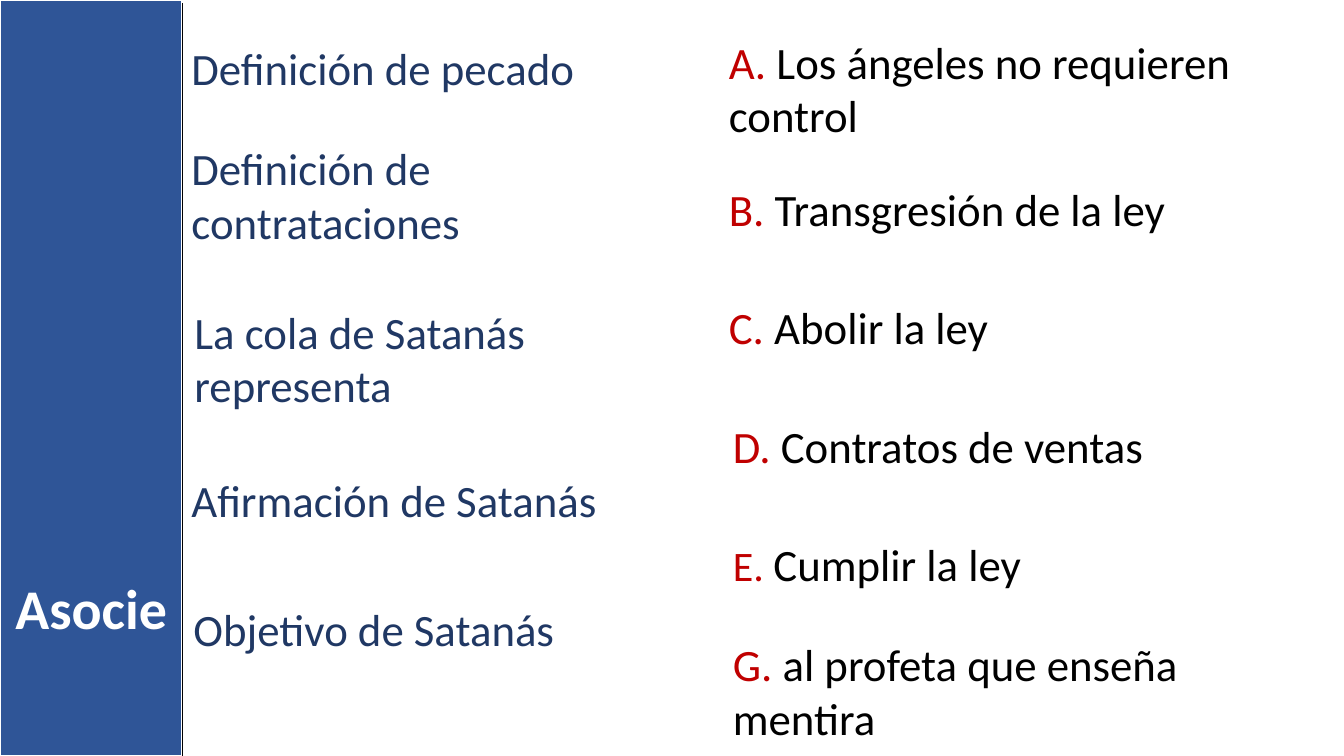
"""Build a matching exercise with concepts on the left and lettered answers on the right."""
from dataclasses import dataclass

from lxml import etree
from pptx import Presentation
from pptx import util as u
from pptx.dml.color import RGBColor
from pptx.enum import shapes, text
from pptx.oxml.ns import qn

PX = 9144
SLIDE_WIDTH, SLIDE_HEIGHT = 1333, 750
SIDEBAR_WIDTH = 181
LINE_HEIGHTS = {1: 64, 2: 118}
FONT = "Calibri"
WHITE = RGBColor(0xFF, 0xFF, 0xFF)
BLACK = RGBColor(0, 0, 0)
BLUE = RGBColor(0x2F, 0x55, 0x97)
NAVY = RGBColor(0x20, 0x38, 0x64)
RED = RGBColor(0xC0, 0, 0)


@dataclass(frozen=True)
class Entry:
    left: int
    top: int
    width: int
    wording: str
    lines: int = 1
    letter: str = ""
    letter_size: int = 32


CONCEPTS = (
    Entry(180, 35, 525, "Definición de pecado"),
    Entry(180, 135, 525, "Definición de contrataciones", 2),
    Entry(183, 297, 492, "La cola de Satanás representa", 2),
    Entry(180, 464, 460, "Afirmación de Satanás"),
    Entry(182, 592, 441, "Objetivo de Satanás"),
)
ANSWERS = (
    Entry(713, 29, 605, "Los ángeles no requieren control", 2, "A"),
    Entry(713, 175, 592, "Transgresión de la ley", 1, "B"),
    Entry(713, 292, 388, "Abolir la ley", 1, "C"),
    Entry(717, 411, 580, "Contratos de ventas", 1, "D"),
    Entry(717, 528, 553, "Cumplir la ley", 1, "E", 30),
    Entry(717, 627, 559, "al profeta que enseña mentira", 2, "G"),
)


def px(*lengths: int) -> list[u.Emu]:
    return [u.Emu(length * PX) for length in lengths]


def add_entry(slide, entry: Entry, color: RGBColor) -> None:
    box = slide.shapes.add_textbox(
        *px(entry.left, entry.top, entry.width, LINE_HEIGHTS[entry.lines]))
    frame = box.text_frame
    frame.word_wrap = True
    frame.auto_size = text.MSO_AUTO_SIZE.SHAPE_TO_FIT_TEXT
    paragraph = frame.paragraphs[0]
    paragraph.font.name = FONT
    paragraph.font.size = u.Pt(32)
    if entry.letter:
        letter = paragraph.add_run()
        letter.text = f"{entry.letter}. "
        letter.font.size = u.Pt(entry.letter_size)
        letter.font.color.rgb = RED
    wording = paragraph.add_run()
    wording.text = entry.wording
    wording.font.size = u.Pt(32)
    wording.font.color.rgb = color


def add_sidebar(slide) -> None:
    sidebar = slide.shapes.add_shape(
        shapes.MSO_SHAPE.RECTANGLE, *px(0, 0, SIDEBAR_WIDTH, SLIDE_HEIGHT))
    sidebar.shadow.inherit = False
    sidebar.fill.solid()
    sidebar.fill.fore_color.rgb = BLUE
    sidebar.line.color.rgb = WHITE
    sidebar.line.width = u.Pt(1.5)


def place_title(slide) -> None:
    title = slide.shapes.title
    title.left, title.top, title.width, title.height = px(0, 564, SIDEBAR_WIDTH, 77)
    frame = title.text_frame
    frame.text = "Asocie"
    frame.word_wrap = True
    frame.auto_size = text.MSO_AUTO_SIZE.SHAPE_TO_FIT_TEXT
    frame.vertical_anchor = text.MSO_ANCHOR.TOP
    paragraph = frame.paragraphs[0]
    paragraph.alignment = text.PP_ALIGN.CENTER
    paragraph.font.name = FONT
    paragraph.font.size = u.Pt(40)
    paragraph.font.bold = True
    paragraph.font.color.rgb = WHITE
    title.element.getparent().append(title.element)


def add_divider(slide) -> None:
    divider = slide.shapes.add_connector(
        shapes.MSO_CONNECTOR.STRAIGHT,
        *px(SIDEBAR_WIDTH, 3, SIDEBAR_WIDTH, SLIDE_HEIGHT))
    divider.line.color.rgb = BLACK
    divider.line.width = u.Pt(1)
    etree.SubElement(divider.element.spPr, qn("a:effectLst"))


def main() -> None:
    deck = Presentation()
    deck.slide_width, deck.slide_height = px(SLIDE_WIDTH, SLIDE_HEIGHT)
    slide = deck.slides.add_slide(deck.slide_layouts.get_by_name("Title Only"))
    add_sidebar(slide)
    for entries, color in ((CONCEPTS, NAVY), (ANSWERS, BLACK)):
        for entry in entries:
            add_entry(slide, entry, color)
    place_title(slide)
    add_divider(slide)
    deck.save("out.pptx")


if __name__ == "__main__":
    main()
